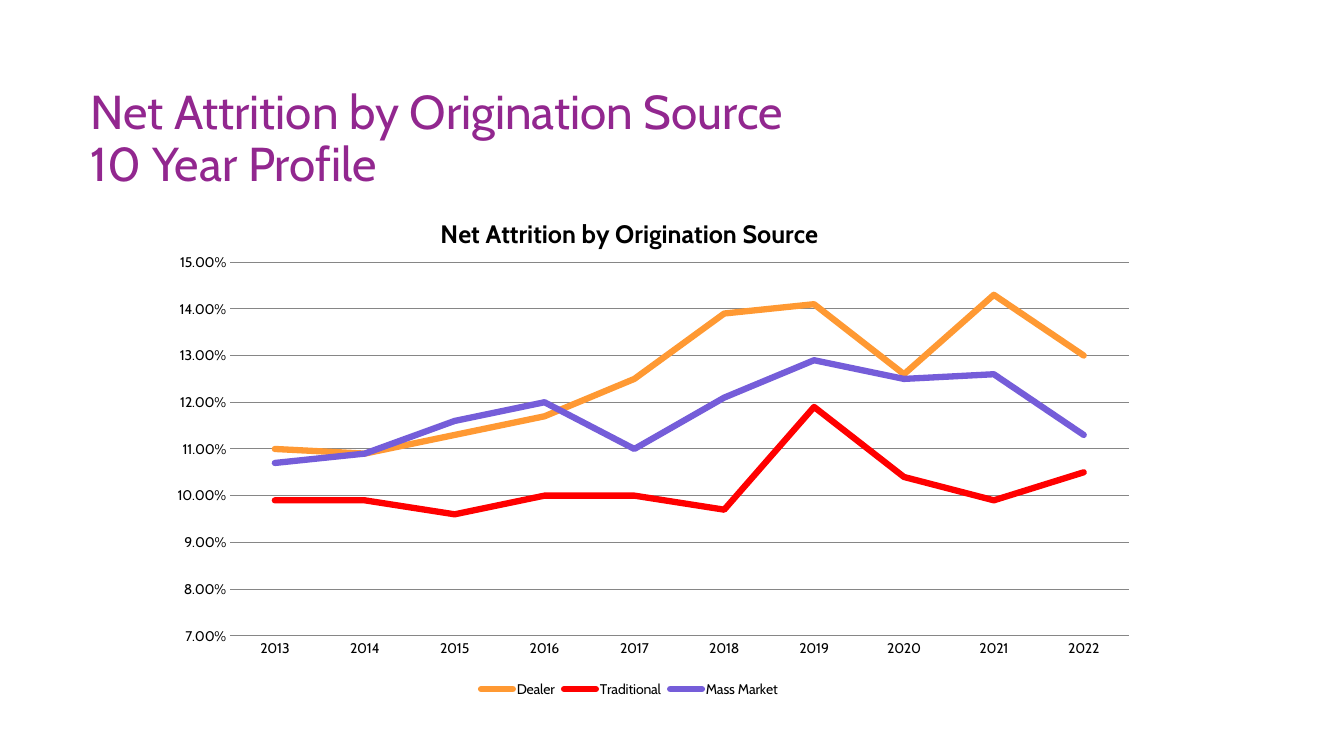
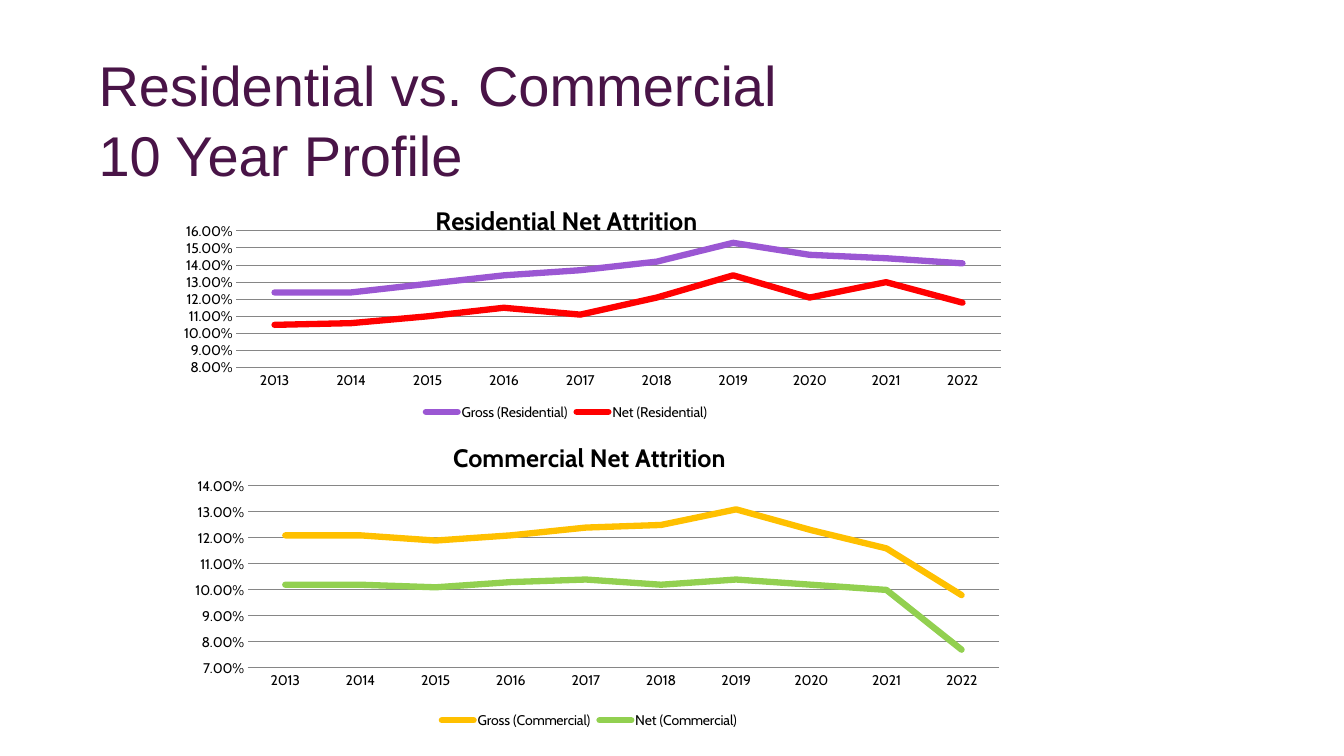
from dataclasses import dataclass

from lxml import etree
from pptx import Presentation
from pptx.chart.data import CategoryChartData
from pptx.dml.color import RGBColor
from pptx.enum.chart import XL_CHART_TYPE, XL_LEGEND_POSITION, XL_MARKER_STYLE, XL_TICK_MARK
from pptx.enum.text import MSO_ANCHOR
from pptx.oxml.ns import qn
from pptx.util import Inches, Pt

LINE_CHART = XL_CHART_TYPE.LINE
LEGEND_BOTTOM = XL_LEGEND_POSITION.BOTTOM
NO_MARKER = XL_MARKER_STYLE.NONE
NO_TICK = XL_TICK_MARK.NONE
BOTTOM, MIDDLE = MSO_ANCHOR.BOTTOM, MSO_ANCHOR.MIDDLE

YEARS = [str(year) for year in range(2013, 2023)]


@dataclass(frozen=True)
class Theme:
    font: str = "Cabin"
    plain_font: str = "Arial"
    purple: str = "92278F"
    plum: str = "491447"
    black: str = "000000"
    grid: str = "868686"
    orange: str = "FF9933"
    red: str = "FF0000"
    indigo: str = "755DD9"
    violet: str = "9B57D3"
    amber: str = "FFC000"
    green: str = "92D050"
    title_size: float = 34
    large_title_size: float = 40
    chart_title_size: float = 18
    label_size: float = 10
    series_width: float = 4.5
    grid_width: float = 0.75


class Report:
    """Holds the deck, its theme and the current slide; areas are percent of the slide."""

    def __init__(self, theme):
        self.theme = theme
        self.deck = Presentation()
        self.deck.slide_width, self.deck.slide_height = Inches(13.33), Inches(7.5)
        self.slide = None

    def add_slide(self):
        self.slide = self.deck.slides.add_slide(self.deck.slide_layouts[6])

    def place(self, area):
        sizes = (self.deck.slide_width, self.deck.slide_height) * 2
        return [int(size * percent / 100) for size, percent in zip(sizes, area)]

    def style_font(self, font, size, color, name=None, bold=False):
        font.name = name or self.theme.font
        font.size, font.bold = Pt(size), bold
        font.color.rgb = RGBColor.from_string(color)

    def style_line(self, line, color, width):
        line.color.rgb = RGBColor.from_string(color)
        line.width = Pt(width)

    def add_title(self, paragraphs, area, anchor, spacing, size, color, font):
        frame = self.slide.shapes.add_textbox(*self.place(area)).text_frame
        frame.word_wrap, frame.vertical_anchor = True, anchor
        frame.text = "\n".join(paragraphs)
        for para in frame.paragraphs:
            para.line_spacing = spacing
            self.style_font(para.font, size, color, font)

    def add_line_chart(self, title, area, plot_area, limits, series):
        """Draw series given as (name, color, percentages); limits are percentages."""
        theme = self.theme
        data = CategoryChartData(number_format="0.00%")
        data.categories = YEARS
        for name, _, percentages in series:
            data.add_series(name, [round(value / 100, 3) for value in percentages])
        chart = self.slide.shapes.add_chart(LINE_CHART, *self.place(area), data).chart
        self.style_font(chart.font, theme.label_size, theme.black)

        heading = chart.chart_title.text_frame
        heading.text = title
        self.style_font(heading.paragraphs[0].font, theme.chart_title_size, theme.black, bold=True)
        chart.has_legend = True
        chart.legend.position = LEGEND_BOTTOM
        chart.legend.include_in_layout = False

        self.style_axes(chart, limits)
        for line, (_, color, _) in zip(chart.plots[0].series, series):
            line.smooth = False
            line.marker.style = NO_MARKER
            self.style_line(line.format.line, color, theme.series_width)
        chart.plots[0].vary_by_categories = False
        self.round_series_caps(chart)
        self.set_plot_area(chart, plot_area)

    def style_axes(self, chart, limits):
        theme = self.theme
        values, years = chart.value_axis, chart.category_axis
        values.minimum_scale, values.maximum_scale = [limit / 100 for limit in limits]
        values.major_unit = 0.01
        values.tick_labels.number_format = "0.00%"
        values.tick_labels.number_format_is_linked = False
        values.format.line.fill.background()
        for axis in (values, years):
            axis.major_tick_mark = axis.minor_tick_mark = NO_TICK
        for line in (values.major_gridlines.format.line, years.format.line):
            self.style_line(line, theme.grid, theme.grid_width)

    def round_series_caps(self, chart):
        for series in chart.element.iter(qn("c:ser")):
            outline = series.find(qn("c:spPr")).find(qn("a:ln"))
            outline.set("cap", "rnd")
            etree.SubElement(outline, qn("a:round"))

    def set_plot_area(self, chart, plot_area):
        """Fix the inner plot area, given as shares of the chart."""
        plot = next(chart.element.iter(qn("c:plotArea")))
        for old_layout in plot.findall(qn("c:layout")):
            plot.remove(old_layout)
        layout = etree.Element(qn("c:layout"))
        plot.insert(0, layout)
        manual = etree.SubElement(layout, qn("c:manualLayout"))
        settings = [("layoutTarget", "inner"), ("xMode", "edge"), ("yMode", "edge")]
        settings += zip("xywh", plot_area)
        for tag, value in settings:
            etree.SubElement(manual, qn(f"c:{tag}")).set("val", str(value))


def main():
    theme = Theme()
    report = Report(theme)

    report.add_slide()
    report.add_title(
        ["Net Attrition by Origination Source\v10 Year Profile"],
        (6, 10, 67.97, 16), BOTTOM, 0.9, theme.title_size, theme.purple, theme.font)
    report.add_line_chart(
        "Net Attrition by Origination Source",
        (9.68, 26, 74.34, 66.8), (0.1, 0.13, 0.9, 0.74), (7, 15),
        [("Dealer", theme.orange,
          [11, 10.9, 11.3, 11.7, 12.5, 13.9, 14.1, 12.6, 14.3, 13]),
         ("Traditional", theme.red,
          [9.9, 9.9, 9.6, 10, 10, 9.7, 11.9, 10.4, 9.9, 10.5]),
         ("Mass Market", theme.indigo,
          [10.7, 10.9, 11.6, 12, 11, 12.1, 12.9, 12.5, 12.6, 11.3])])

    report.add_slide()
    report.add_title(
        ["Residential vs. Commercial", "10 Year Profile"],
        (6.6, 6, 84.92, 19.2), MIDDLE, 1.04, theme.large_title_size, theme.plum,
        theme.plain_font)
    report.add_line_chart(
        "Residential Net Attrition",
        (9.83, 24.93, 64.67, 31.2), (0.12, 0.18, 0.88, 0.58), (8, 16),
        [("Gross (Residential)", theme.violet,
          [12.4, 12.4, 12.9, 13.4, 13.7, 14.2, 15.3, 14.6, 14.4, 14.1]),
         ("Net (Residential)", theme.red,
          [10.5, 10.6, 11, 11.5, 11.1, 12.1, 13.4, 12.1, 13, 11.8])])
    report.add_line_chart(
        "Commercial Net Attrition",
        (12.08, 56.13, 63.54, 40.8), (0.1, 0.2, 0.88, 0.59), (7, 14),
        [("Gross (Commercial)", theme.amber,
          [12.1, 12.1, 11.9, 12.1, 12.4, 12.5, 13.1, 12.3, 11.6, 9.8]),
         ("Net (Commercial)", theme.green,
          [10.2, 10.2, 10.1, 10.3, 10.4, 10.2, 10.4, 10.2, 10, 7.7])])

    report.deck.save("out.pptx")


if __name__ == "__main__":
    main()
